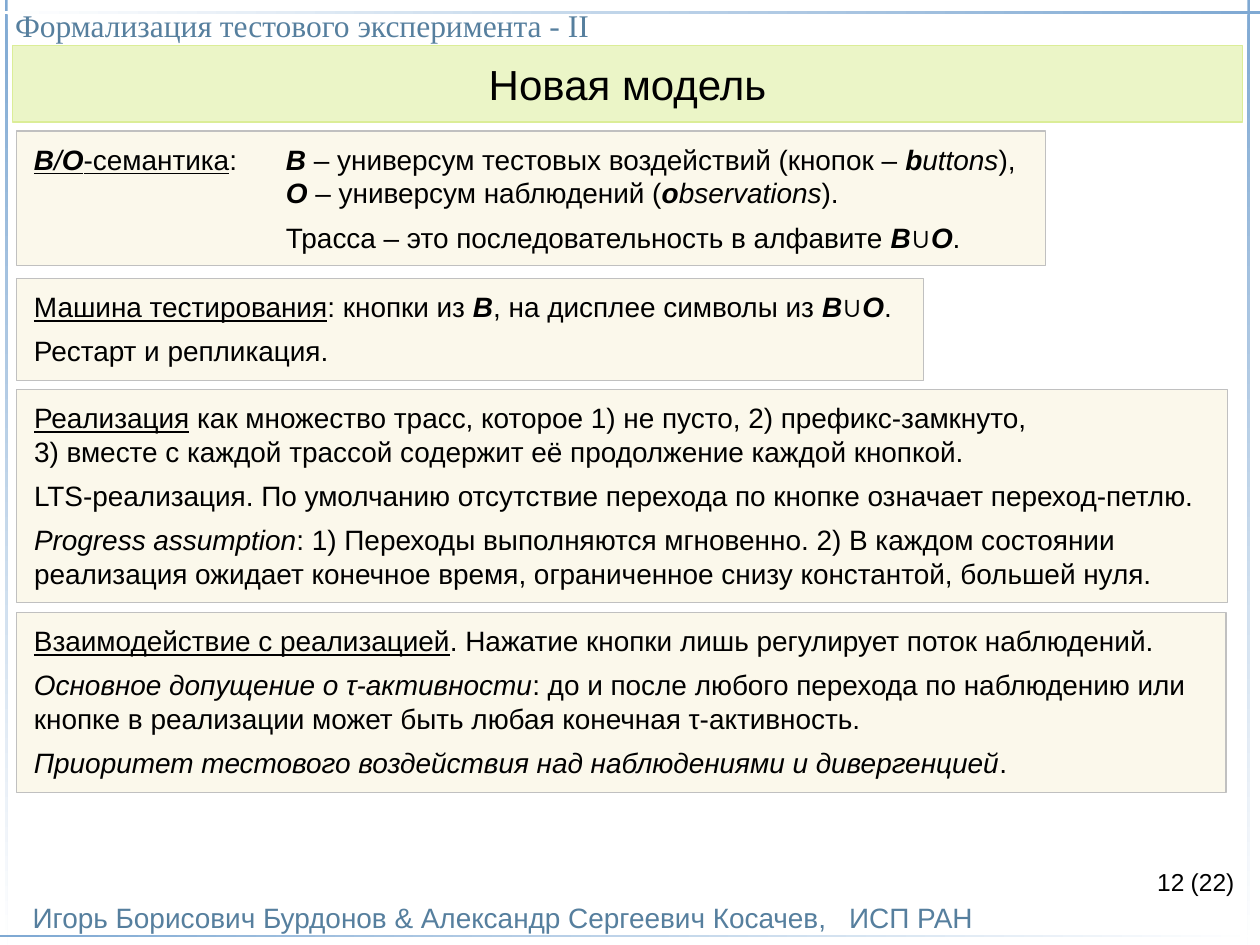
from dataclasses import dataclass

from lxml import etree
from pptx import Presentation
from pptx.dml.color import RGBColor
from pptx.enum.shapes import MSO_SHAPE
from pptx.enum.text import MSO_ANCHOR, MSO_AUTO_SIZE, PP_ALIGN
from pptx.oxml.ns import qn
from pptx.util import Inches, Pt

RECT = MSO_SHAPE.RECTANGLE
LEFT, CENTER, RIGHT, JUST = (PP_ALIGN.LEFT, PP_ALIGN.CENTER,
                             PP_ALIGN.RIGHT, PP_ALIGN.JUSTIFY)
TOP, MIDDLE, BOTTOM = MSO_ANCHOR.TOP, MSO_ANCHOR.MIDDLE, MSO_ANCHOR.BOTTOM
GROW, FIXED = MSO_AUTO_SIZE.SHAPE_TO_FIT_TEXT, MSO_AUTO_SIZE.NONE

BLUE, WHITE, STEEL, BLACK = "7FA9D3", "FFFFFF", "567F9E", "000000"
LIME, MOSS, CREAM, GRAY = "EBF5C7", "DBED97", "FBF8EB", "C0C0C0"


@dataclass
class Area:
    x: float
    y: float
    w: float
    h: float


@dataclass
class Line:
    runs: list[tuple[str, str]]  # text and style letters: b, i, u
    after: float = 0
    tab: float = 0


@dataclass
class Look:
    size: float = 16
    color: str = BLACK
    font: str = "Arial"
    align: PP_ALIGN = LEFT
    anchor: MSO_ANCHOR = TOP
    pad: tuple[float, float] = (0, 0)
    wrap: bool = True
    fit: MSO_AUTO_SIZE = FIXED


@dataclass
class Panel:
    area: Area
    lines: list[Line]


def rgb(code: str) -> RGBColor:
    return RGBColor.from_string(code)


def place(area: Area) -> tuple:
    return tuple(Inches(v) for v in (area.x, area.y, area.w, area.h))


def write(shape, lines: list[Line], look: Look) -> None:
    frame = shape.text_frame
    frame.word_wrap, frame.auto_size = look.wrap, look.fit
    frame.vertical_anchor = look.anchor
    frame.margin_left = frame.margin_right = Inches(look.pad[0])
    frame.margin_top = frame.margin_bottom = Inches(look.pad[1])
    for n, line in enumerate(lines):
        para = frame.add_paragraph() if n else frame.paragraphs[0]
        para.alignment = look.align
        para.space_after = Pt(line.after)
        if line.tab:
            tabs = etree.SubElement(para._p.get_or_add_pPr(), qn("a:tabLst"))
            etree.SubElement(tabs, qn("a:tab"), algn="l",
                             pos=str(Inches(line.tab)))
        for text, style in line.runs:
            run = para.add_run()
            run.text = text
            font = run.font
            font.name, font.size = look.font, Pt(look.size)
            font.color.rgb = rgb(look.color)
            font.bold, font.italic = "b" in style, "i" in style
            font.underline = "u" in style


def bar(slide, area: Area, angle: float) -> None:
    shape = slide.shapes.add_shape(RECT, *place(area))
    shape.shadow.inherit = False
    shape.line.fill.background()
    shape.fill.gradient()
    shape.fill.gradient_angle = angle
    for stop, code in zip(shape.fill.gradient_stops, (BLUE, WHITE)):
        stop.color.rgb = rgb(code)


def label(slide, area: Area, line: Line, look: Look) -> None:
    write(slide.shapes.add_textbox(*place(area)), [line], look)


def block(slide, panel: Panel, fill: str, edge: str, look: Look) -> None:
    shape = slide.shapes.add_shape(RECT, *place(panel.area))
    shape.shadow.inherit = False
    shape.fill.solid()
    shape.fill.fore_color.rgb = rgb(fill)
    shape.line.color.rgb = rgb(edge)
    shape.line.width = Pt(0.75)
    write(shape, panel.lines, look)


UNION = [("B", "bi"), ("∪", ""), ("O", "bi"), (".", "")]

PANELS = [
    Panel(Area(0.13, 1.04, 8.17, 1.07), [
        Line([("B", "biu"), ("/", "iu"), ("O", "biu"), ("-семантика", "u"),
              (":\t", ""), ("B", "bi"),
              (" – универсум тестовых воздействий (кнопок – ", ""),
              ("b", "bi"), ("uttons", "i"), ("),", "")], tab=2),
        Line([("\tO", "bi"), (" – универсум наблюдений (", ""),
              ("o", "bi"), ("bservations", "i"), (").", "")], 6, tab=2),
        Line([("\tТрасса – это последовательность в алфавите ", ""), *UNION],
             tab=2),
    ]),
    Panel(Area(0.13, 2.21, 7.2, 0.81), [
        Line([("Машина тестирования", "u"), (": кнопки из ", ""), ("B", "bi"),
              (", на дисплее символы из ", ""), *UNION], 6),
        Line([("Рестарт и репликация.", "")]),
    ]),
    Panel(Area(0.13, 3.09, 9.61, 1.69), [
        Line([("Реализация", "u"),
              (" как множество трасс, которое 1) не пусто, "
               "2) префикс-замкнуто,", "")]),
        Line([("3) вместе с каждой трассой содержит её продолжение "
               "каждой кнопкой.", "")], 6),
        Line([("LTS-реализация. По умолчанию отсутствие перехода по кнопке "
               "означает переход-петлю.", "")], 6),
        Line([("Progress assumption", "i"),
              (": 1) Переходы выполняются мгновенно. "
               "2) В каждом состоянии", "")]),
        Line([("реализация ожидает конечное время, ограниченное снизу "
               "константой, большей нуля.", "")], 6),
    ]),
    Panel(Area(0.13, 4.86, 9.6, 1.43), [
        Line([("Взаимодействие с реализацией", "u"),
              (". Нажатие кнопки лишь регулирует поток наблюдений.", "")], 6),
        Line([("Основное допущение о τ-активности", "i"),
              (": до и после любого перехода по наблюдению или", "")]),
        Line([("кнопке в реализации может быть любая конечная "
               "τ-активность.", "")], 6),
        Line([("Приоритет тестового воздействия над наблюдениями "
               "и дивергенцией", "i"), (".", "")]),
    ]),
]


def main() -> None:
    deck = Presentation()
    deck.slide_width, deck.slide_height = Inches(10), Inches(7.5)
    slide = deck.slides.add_slide(deck.slide_layouts[6])

    # Fading frame lines
    for x in (0.04, 9.9):
        bar(slide, Area(x, 0, 0.02, 7.5), 270)
    for y, angle in ((0.09, 180), (7.42, 0)):
        bar(slide, Area(0, y, 10, 0.02), angle)

    # Footer, header and page count
    label(slide, Area(0.26, 7.14, 7.5, 0.27),
          Line([("Игорь Борисович Бурдонов & Александр Сергеевич Косачев,"
                 "\tИСП РАН", "")], tab=6.48),
          Look(color=STEEL, anchor=BOTTOM, wrap=False))
    label(slide, Area(0.12, 0.05, 9.73, 0.3),
          Line([("Формализация тестового эксперимента - II", "")]),
          Look(18, STEEL, "Times New Roman", fit=GROW))
    label(slide, Area(9.45, 6.88, 0.35, 0.24), Line([("(22)", "")]),
          Look(14, align=JUST, wrap=False, fit=GROW))
    label(slide, Area(7.17, 6.83, 2.33, 0.52), Line([("12", "")]),
          Look(14, align=RIGHT, pad=(0.1, 0.05)))

    # Title band
    title = Panel(Area(0.1, 0.36, 9.76, 0.61), [Line([("Новая модель", "")])])
    block(slide, title, LIME, MOSS,
          Look(24, align=CENTER, anchor=MIDDLE, pad=(0, 0.1)))

    # Text panels
    body = Look(pad=(0.14, 0.09), wrap=False, fit=GROW)
    for panel in PANELS:
        block(slide, panel, CREAM, GRAY, body)

    deck.save("out.pptx")


if __name__ == "__main__":
    main()
